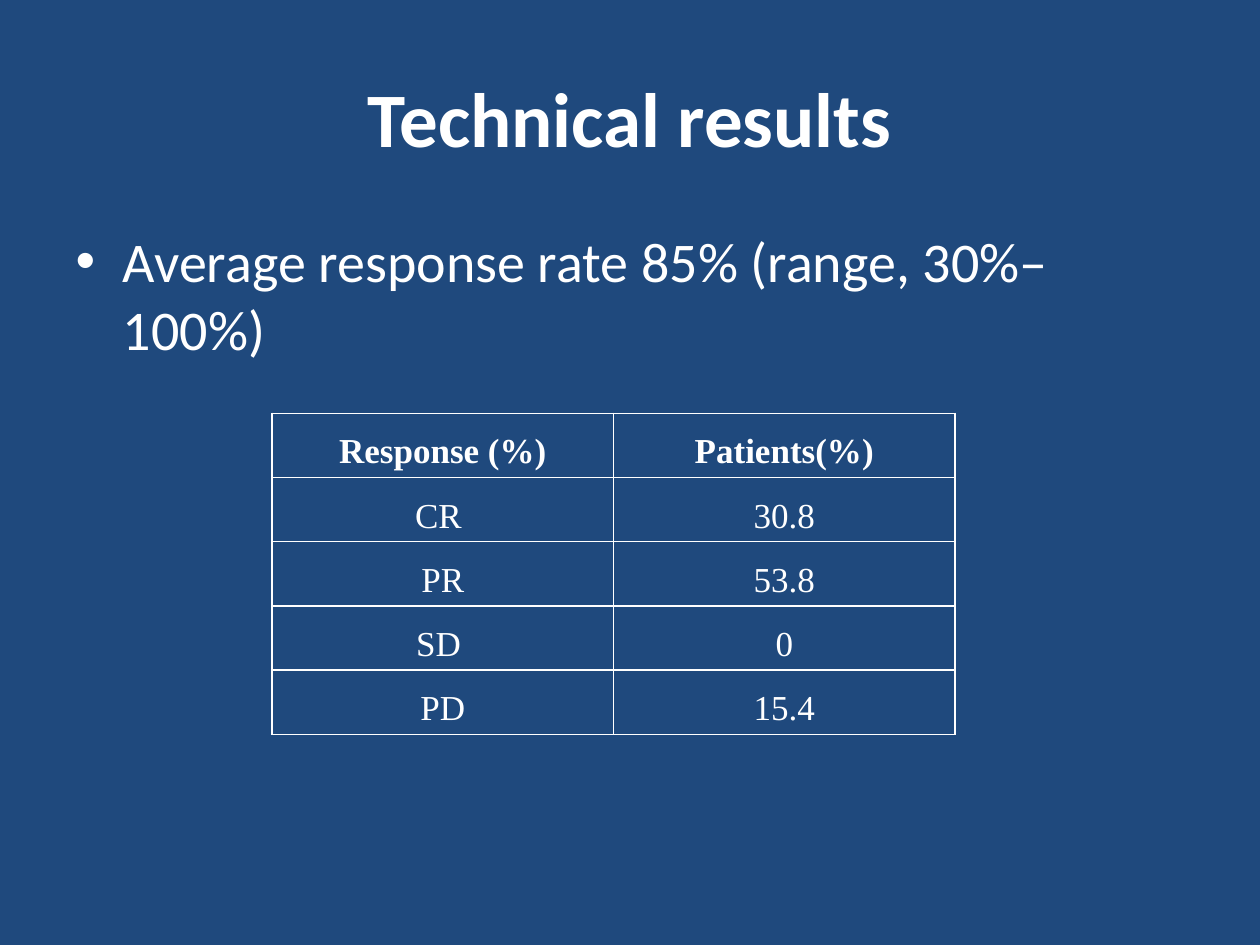
"""Build the technical results slide with its response table."""
from typing import NamedTuple

from lxml.etree import SubElement
from pptx import Presentation
from pptx.dml.color import RGBColor
from pptx.enum.text import MSO_ANCHOR, PP_ALIGN
from pptx.oxml.ns import qn
from pptx.util import Inches, Pt

NAVY = RGBColor(0x1F, 0x49, 0x7D)
WHITE = RGBColor(0xFF, 0xFF, 0xFF)
COL_W = Inches(2.71)
ROW_H = Inches(0.51)


class Response(NamedTuple):
    name: str
    patients: str


ROWS = [
    Response("Response (%)", "Patients(%)"),
    Response("CR ", "30.8"),
    Response("PR", "53.8"),
    Response("SD ", "0"),
    Response("PD", "15.4"),
]


def add_run(p, text: str, size: float, font: str, bold: bool = False) -> None:
    r = p.add_run()
    r.text = text
    r.font.size = Pt(size)
    r.font.name = font
    r.font.bold = bold
    r.font.color.rgb = WHITE


def fill_placeholder(sp, top: float, height: float, text: str, size: float,
                     bold: bool = False) -> None:
    sp.left, sp.top = Inches(0.5), Inches(top)
    sp.width, sp.height = Inches(9), Inches(height)
    add_run(sp.text_frame.paragraphs[0], text, size, "Calibri", bold)


def set_borders(cell, color: RGBColor, width: float) -> None:
    tc_pr = cell._tc.get_or_add_tcPr()
    for side in ("a:lnL", "a:lnR", "a:lnT", "a:lnB"):
        ln = SubElement(tc_pr, qn(side), w=str(Pt(width)))
        fill = SubElement(ln, qn("a:solidFill"))
        SubElement(fill, qn("a:srgbClr"), val=str(color))


def format_cell(cell, text: str, bold: bool) -> None:
    set_borders(cell, WHITE, 1)
    cell.fill.background()
    cell.margin_left = cell.margin_right = Inches(0.07)
    cell.margin_top = cell.margin_bottom = 0
    p = cell.text_frame.paragraphs[0]
    p.alignment = PP_ALIGN.CENTER
    p.line_spacing = 1.5
    add_run(p, text, 20, "Times New Roman", bold)


def add_response_table(s, rows: list[Response]) -> None:
    n_cols = len(Response._fields)
    table = s.shapes.add_table(len(rows), n_cols, Inches(2.16), Inches(3.28),
                               COL_W * n_cols, ROW_H * len(rows)).table
    table.horz_banding = False
    for col in table.columns:
        col.width = COL_W
    for i, row in enumerate(rows):
        table.rows[i].height = ROW_H
        for j, text in enumerate(row):
            format_cell(table.cell(i, j), text, bold=i == 0)


def main() -> None:
    prs = Presentation()
    prs.slide_width, prs.slide_height = Inches(10), Inches(7.5)
    s = prs.slides.add_slide(prs.slide_layouts[1])
    s.background.fill.solid()
    s.background.fill.fore_color.rgb = NAVY

    title, body = s.placeholders
    fill_placeholder(title, 0.3, 1.25, "Technical results", 44, bold=True)
    title.text_frame.vertical_anchor = MSO_ANCHOR.MIDDLE
    fill_placeholder(body, 1.75, 5, "Average response rate 85% (range, 30%–100%)", 32)
    add_response_table(s, ROWS)
    prs.save("out.pptx")


if __name__ == "__main__":
    main()
